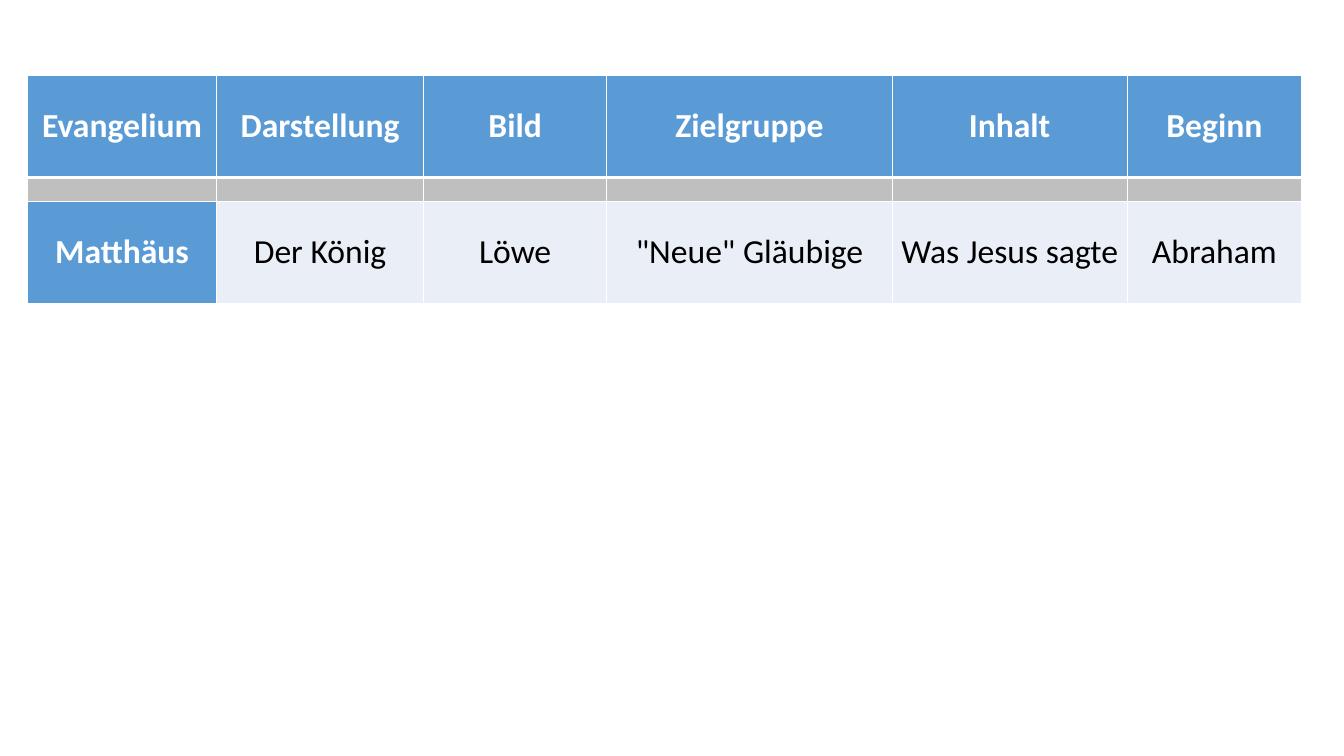
from lxml.etree import SubElement
from pptx import Presentation
from pptx.dml.color import RGBColor
from pptx.enum.text import MSO_ANCHOR, PP_ALIGN
from pptx.oxml.ns import qn
from pptx.util import Inches, Pt

COLORS = {"header": "5B9BD5", "divider": "BFBFBF", "body": "EAEFF7",
          "border": "FFFFFF", "light": "FFFFFF", "dark": "000000"}
COLUMN_WIDTHS = [1.88, 2.05, 1.82, 2.83, 2.33, 1.73]
ROW_HEIGHTS = [1.01, 0.24, 1.01]
ROWS = [
    ["Evangelium", "Darstellung", "Bild", "Zielgruppe", "Inhalt", "Beginn"],
    [""] * len(COLUMN_WIDTHS),
    ["Matthäus", "Der König", "Löwe", '"Neue" Gläubige', "Was Jesus sagte", "Abraham"],
]


def set_borders(cell, top, bottom):
    """Draw the white cell borders, with top and bottom widths in points."""
    properties = cell._tc.get_or_add_tcPr()
    for side, width in (("L", 1), ("R", 1), ("T", top), ("B", bottom)):
        line = SubElement(properties, qn(f"a:ln{side}"), w=str(Pt(width)))
        fill = SubElement(line, qn("a:solidFill"))
        SubElement(fill, qn("a:srgbClr"), val=COLORS["border"])


def write_cell(cell, text, heading):
    """Fill a cell with one centred span, or keep an empty cell low."""
    cell.vertical_anchor = MSO_ANCHOR.MIDDLE
    cell.margin_left = cell.margin_right = Inches(0.07)
    cell.margin_top = cell.margin_bottom = 0
    para = cell.text_frame.paragraphs[0]
    para.alignment = PP_ALIGN.CENTER
    if not text:
        SubElement(para._p, qn("a:endParaRPr"), sz="800")
        return
    span = para.add_run()
    span.text = text
    span.font.name = "Calibri"
    span.font.size = Pt(24)
    span.font.bold = heading
    span.font.color.rgb = RGBColor.from_string(COLORS["light" if heading else "dark"])


def add_gospel_table(page, left, top):
    """Place the gospel table with its top left corner at the given point."""
    table = page.shapes.add_table(
        len(ROWS), len(COLUMN_WIDTHS), Inches(left), Inches(top),
        Inches(sum(COLUMN_WIDTHS)), Inches(sum(ROW_HEIGHTS))).table
    for column, width in zip(table.columns, COLUMN_WIDTHS):
        column.width = Inches(width)
    for row, height in zip(table.rows, ROW_HEIGHTS):
        row.height = Inches(height)
    for row_index, texts in enumerate(ROWS):
        for column_index, text in enumerate(texts):
            cell = table.cell(row_index, column_index)
            heading = row_index == 0 or column_index == 0
            kind = "divider" if not text else "header" if heading else "body"
            set_borders(cell, 3 if row_index == 1 else 1, 3 if row_index == 0 else 1)
            cell.fill.solid()
            cell.fill.fore_color.rgb = RGBColor.from_string(COLORS[kind])
            write_cell(cell, text, heading)


def main():
    """Build the deck and save it."""
    deck = Presentation()
    deck.slide_width, deck.slide_height = Inches(13.33), Inches(7.5)
    page = deck.slides.add_slide(deck.slide_layouts[6])
    add_gospel_table(page, 0.27, 0.75)
    deck.save("out.pptx")


if __name__ == "__main__":
    main()
